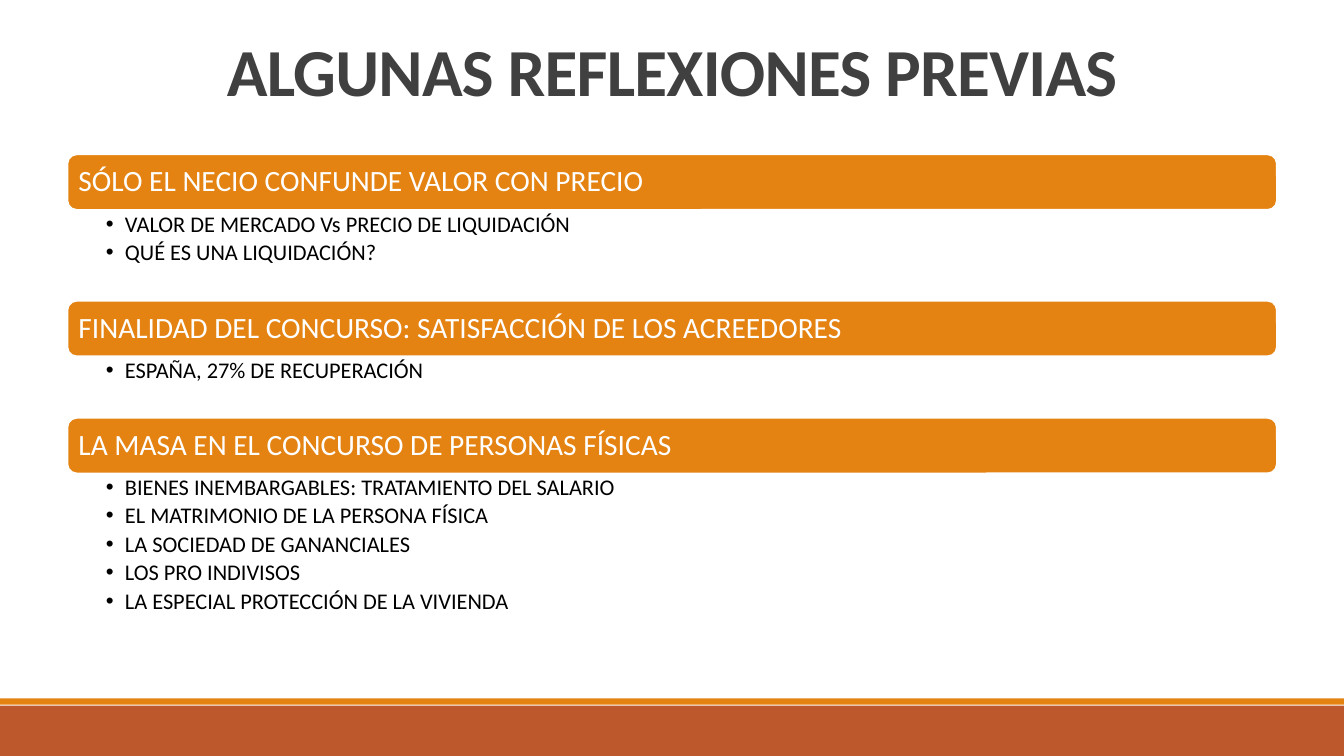
import pptx
import pptx.dml.color
import pptx.enum.shapes
import pptx.enum.text
import pptx.oxml
import pptx.oxml.ns
import pptx.util

Cm = pptx.util.Cm
Pt = pptx.util.Pt
ANCHOR = pptx.enum.text.MSO_ANCHOR
ALIGN = pptx.enum.text.PP_ALIGN
SHAPE = pptx.enum.shapes.MSO_SHAPE

COLORS = {
    "white": "FFFFFF",
    "black": "000000",
    "title": "404040",
    "orange": "E48312",
    "rust": "BD582C",
}
LEFT, WIDTH = 1.7, 30.48
BAR_HEIGHT = 1.4
FIRST_BAR_TOP = 3.89
SLIDE_WIDTH, SLIDE_HEIGHT = 33.87, 19.05

# Heading, list items, height of the list area
SECTIONS = [
    ("SÓLO EL NECIO CONFUNDE VALOR CON PRECIO",
     ["VALOR DE MERCADO Vs PRECIO DE LIQUIDACIÓN",
      "QUÉ ES UNA LIQUIDACIÓN?"], 2.29),
    ("FINALIDAD DEL CONCURSO: SATISFACCIÓN DE LOS ACREEDORES",
     ["ESPAÑA, 27% DE RECUPERACIÓN"], 1.55),
    ("LA MASA EN EL CONCURSO DE PERSONAS FÍSICAS",
     ["BIENES INEMBARGABLES: TRATAMIENTO DEL SALARIO",
      "EL MATRIMONIO DE LA PERSONA FÍSICA",
      "LA SOCIEDAD DE GANANCIALES",
      "LOS PRO INDIVISOS",
      "LA ESPECIAL PROTECCIÓN DE LA VIVIENDA"], 4.6),
]


def rgb(name):
    return pptx.dml.color.RGBColor.from_string(COLORS[name])


def write_text(paragraph, text, size, color, bold=False, align=ALIGN.LEFT,
               line_spacing=0.9, space_after=0, font="Calibri"):
    run = paragraph.add_run()
    run.text = text
    run.font.name = font
    run.font.size = Pt(size)
    run.font.bold = bold
    run.font.color.rgb = rgb(color)
    paragraph.alignment = align
    paragraph.line_spacing = line_spacing
    paragraph.space_before = Pt(0)
    paragraph.space_after = Pt(space_after)
    return run


def add_bullet(paragraph, indent):
    properties = paragraph._p.get_or_add_pPr()
    properties.set("marL", str(indent))
    properties.set("indent", str(-indent))
    namespace = pptx.oxml.ns.nsdecls("a")
    properties.append(pptx.oxml.parse_xml(f'<a:buFont {namespace} typeface="Arial"/>'))
    properties.append(pptx.oxml.parse_xml(f'<a:buChar {namespace} char="•"/>'))


class SlideBuilder:
    """Holds the current slide and draws its elements, with lengths in centimetres."""

    def __init__(self, slide):
        self.slide = slide

    def place(self, shape, left, top, width, height):
        shape.left, shape.top = Cm(left), Cm(top)
        shape.width, shape.height = Cm(width), Cm(height)

    def frame(self, shape, anchor, horizontal, vertical):
        frame = shape.text_frame
        frame.word_wrap = True
        frame.auto_size = pptx.enum.text.MSO_AUTO_SIZE.NONE
        frame.vertical_anchor = anchor
        frame.margin_left, frame.margin_right = Cm(horizontal[0]), Cm(horizontal[1])
        frame.margin_top = frame.margin_bottom = Cm(vertical)
        return frame

    def block(self, kind, left, top, width, height, color):
        shape = self.slide.shapes.add_shape(
            kind, Cm(left), Cm(top), Cm(width), Cm(height))
        shape.shadow.inherit = False
        shape.fill.solid()
        shape.fill.fore_color.rgb = rgb(color)
        shape.line.fill.background()
        return shape

    def title(self, text):
        shape = self.slide.shapes.title
        self.place(shape, LEFT, 0.76, WIDTH, 2.16)
        frame = self.frame(shape, ANCHOR.BOTTOM, (0.25, 0.25), 0.13)
        run = write_text(frame.paragraphs[0], text, size=48, color="title", bold=True,
                         align=ALIGN.CENTER, line_spacing=0.85)
        run.font._element.set("spc", "-50")

    def heading(self, text, top):
        bar = self.block(SHAPE.ROUNDED_RECTANGLE, LEFT, top, WIDTH, BAR_HEIGHT, "orange")
        bar.line.color.rgb = rgb("white")
        bar.line.width = Pt(1.25)
        frame = self.frame(bar, ANCHOR.MIDDLE, (0.21, 0.21), 0.23)
        write_text(frame.paragraphs[0], text, size=21, color="white")

    def bullets(self, placeholder, items, top, height):
        self.place(placeholder, LEFT, top, WIDTH, height)
        frame = self.frame(placeholder, ANCHOR.TOP, (0.97, 0.4), 0.07)
        for index, item in enumerate(items):
            paragraph = frame.add_paragraph() if index else frame.paragraphs[0]
            write_text(paragraph, item, size=16, color="black", space_after=3)
            add_bullet(paragraph, Cm(0.48))


def main():
    presentation = pptx.Presentation()
    presentation.slide_width = Cm(SLIDE_WIDTH)
    presentation.slide_height = Cm(SLIDE_HEIGHT)
    layout = presentation.slide_layouts.get_by_name("Comparison")
    slide = presentation.slides.add_slide(layout)
    builder = SlideBuilder(slide)

    builder.block(SHAPE.RECTANGLE, 0, 17.78, SLIDE_WIDTH, 1.27, "rust")
    builder.block(SHAPE.RECTANGLE, 0, 17.6, SLIDE_WIDTH, 0.16, "orange")
    builder.title("ALGUNAS REFLEXIONES PREVIAS")

    bodies = list(slide.placeholders)[1:]
    top = FIRST_BAR_TOP
    for body, (heading, items, list_height) in zip(bodies, SECTIONS):
        builder.heading(heading, top)
        builder.bullets(body, items, top + BAR_HEIGHT, list_height)
        top += BAR_HEIGHT + list_height
    for unused in bodies[len(SECTIONS):]:
        unused.element.getparent().remove(unused.element)

    presentation.save("out.pptx")


if __name__ == "__main__":
    main()
